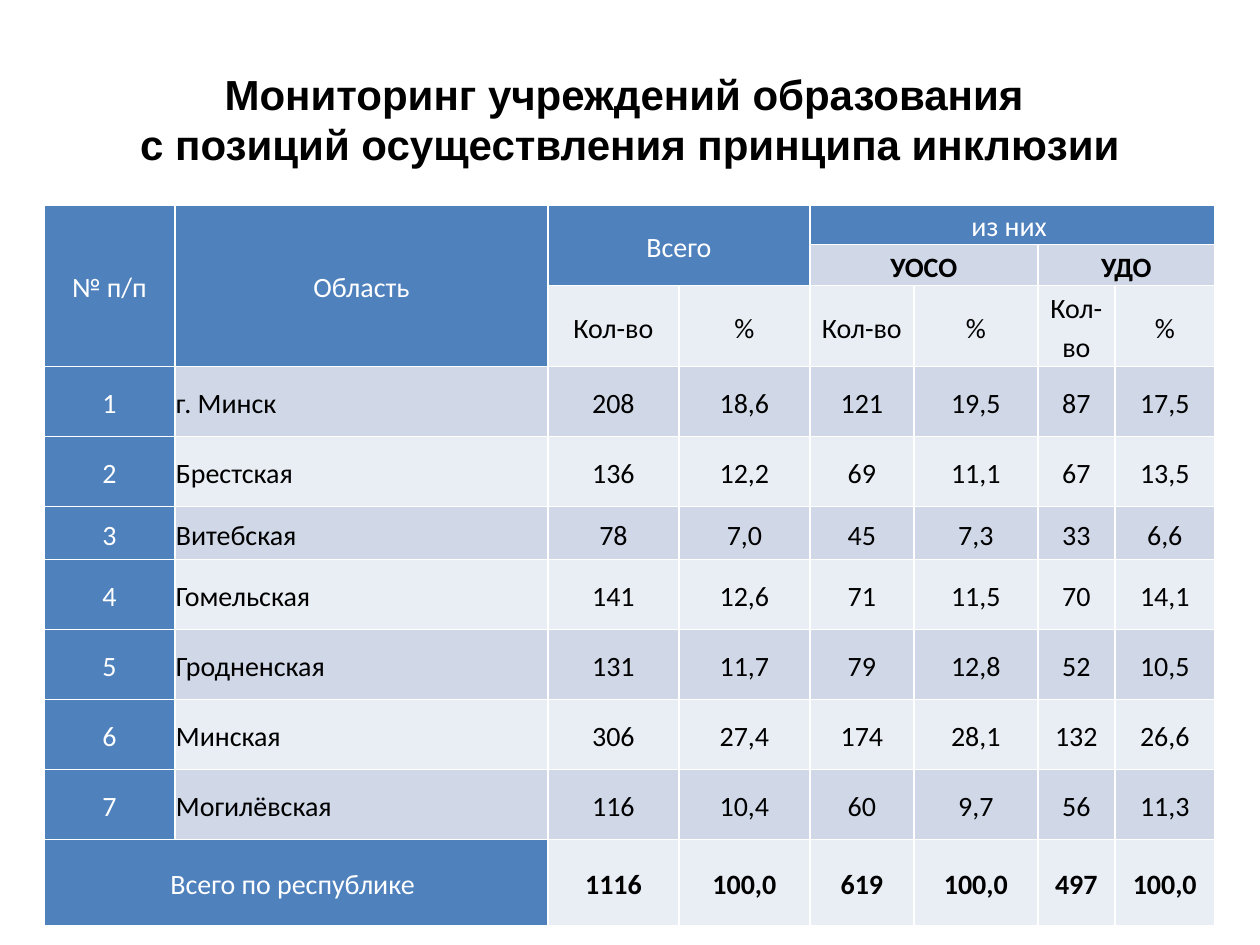
from lxml import etree
from pptx import Presentation
from pptx import util as u
from pptx.dml.color import RGBColor
from pptx.enum import text
from pptx.oxml.ns import qn

SCALE = 914400 // 126  # EMU in one px
BLUE, DARK_BAND, LIGHT_BAND = "4F81BD", "D0D8E8", "E9EDF4"
WHITE, BLACK = "FFFFFF", "000000"

# Content
TITLE = "Мониторинг учреждений образования \nс позиций осуществления принципа инклюзии"
HEADINGS = [  # row, column, rows spanned, columns spanned, wording
    (0, 0, 3, 1, "№ п/п"),
    (0, 1, 3, 1, "Область"),
    (0, 2, 2, 2, "Всего"),
    (0, 4, 1, 4, "из них "),
]
GROUPS = [(1, 4, 1, 2, "УОСО"), (1, 6, 1, 2, "УДО")]
MEASURES = ["Кол-во", "%"] * 3
REGIONS = [
    ("г. Минск", "208", "18,6", "121", "19,5", "87", "17,5"),
    ("Брестская", "136", "12,2", "69", "11,1", "67", "13,5"),
    ("Витебская", "78", "7,0", "45", "7,3", "33", "6,6"),
    ("Гомельская", "141", "12,6", "71", "11,5", "70", "14,1"),
    ("Гродненская", "131", "11,7", "79", "12,8", "52", "10,5"),
    ("Минская", "306", "27,4", "174", "28,1", "132", "26,6"),
    ("Могилёвская", "116", "10,4", "60", "9,7", "56", "11,3"),
]
TOTAL_LABEL = "Всего по республике "
TOTALS = ["1116", "100,0", "619", "100,0", "497", "100,0"]

COLUMN_WIDTHS = [131, 373, 131, 131, 104, 124, 77, 100]
ROW_HEIGHTS = [39, 41, 80, 70, 70, 53, 70, 70, 70, 70, 86]
FIRST_REGION_ROW = 3
TOTAL_ROW = FIRST_REGION_ROW + len(REGIONS)


def px(value):
    return u.Emu(value * SCALE)


def color(hex_string):
    return RGBColor.from_string(hex_string)


def write(frame, wording, size=16, font="Calibri", fill=BLACK, bold=False,
          align=text.PP_ALIGN.CENTER, spacing=None):
    paragraph = frame.paragraphs[0]
    paragraph.text = wording
    paragraph.alignment = align
    paragraph.line_spacing = spacing
    for run in paragraph.runs:
        run.font.size = u.Pt(size)
        run.font.name = font
        run.font.bold = bold
        run.font.color.rgb = color(fill)


def add_borders(cell):
    properties = cell._tc.get_or_add_tcPr()
    for index, side in enumerate(("lnL", "lnR", "lnT", "lnB")):
        line = etree.Element(qn("a:" + side), w=str(u.Pt(1)))
        solid = etree.SubElement(line, qn("a:solidFill"))
        etree.SubElement(solid, qn("a:srgbClr"), val=WHITE)
        properties.insert(index, line)


def fill_cell(table, row, column, wording, background, **text_format):
    cell = table.cell(row, column)
    cell.fill.solid()
    cell.fill.fore_color.rgb = color(background)
    write(cell.text_frame, wording, spacing=1.15, **text_format)


def fill_span(table, row, column, rows, columns, wording, background, **text_format):
    last = table.cell(row + rows - 1, column + columns - 1)
    table.cell(row, column).merge(last)
    fill_cell(table, row, column, wording, background, **text_format)


presentation = Presentation()
presentation.slide_width, presentation.slide_height = u.Inches(10), u.Inches(7.5)
slide = presentation.slides.add_slide(presentation.slide_layouts[5])

# Title
title = slide.shapes.title
title.left, title.top, title.width, title.height = map(px, (87, 27, 1086, 184))
title.text_frame.vertical_anchor = text.MSO_ANCHOR.MIDDLE
write(title.text_frame, TITLE, size=24, font="Arial", bold=True)

# Table grid
table = slide.shapes.add_table(
    len(ROW_HEIGHTS), len(COLUMN_WIDTHS), px(44), px(205),
    px(sum(COLUMN_WIDTHS)), px(sum(ROW_HEIGHTS))).table
table.first_row = table.horz_banding = False
for table_column, width in zip(table.columns, COLUMN_WIDTHS):
    table_column.width = px(width)
for table_row, height in zip(table.rows, ROW_HEIGHTS):
    table_row.height = px(height)
for cell in table.iter_cells():
    cell.vertical_anchor = text.MSO_ANCHOR.MIDDLE
    cell.margin_left = cell.margin_right = px(1)
    cell.margin_top = cell.margin_bottom = px(1)
    add_borders(cell)
heading_cell = table.cell(0, 4)
heading_cell.margin_top = heading_cell.margin_bottom = 0

# Headings
for heading in HEADINGS:
    fill_span(table, *heading, BLUE, fill=WHITE)
for group in GROUPS:
    fill_span(table, *group, DARK_BAND, bold=True)
for column, measure in enumerate(MEASURES, 2):
    fill_cell(table, 2, column, measure, LIGHT_BAND)

# Regions
for number, (region, *values) in enumerate(REGIONS, 1):
    row = FIRST_REGION_ROW + number - 1
    band = DARK_BAND if number % 2 else LIGHT_BAND
    fill_cell(table, row, 0, str(number), BLUE, fill=WHITE)
    fill_cell(table, row, 1, region, band, align=text.PP_ALIGN.LEFT)
    for column, value in enumerate(values, 2):
        fill_cell(table, row, column, value, band)

# Totals
fill_span(table, TOTAL_ROW, 0, 1, 2, TOTAL_LABEL, BLUE, fill=WHITE)
for column, value in enumerate(TOTALS, 2):
    fill_cell(table, TOTAL_ROW, column, value, LIGHT_BAND, bold=True)

presentation.save("out.pptx")
